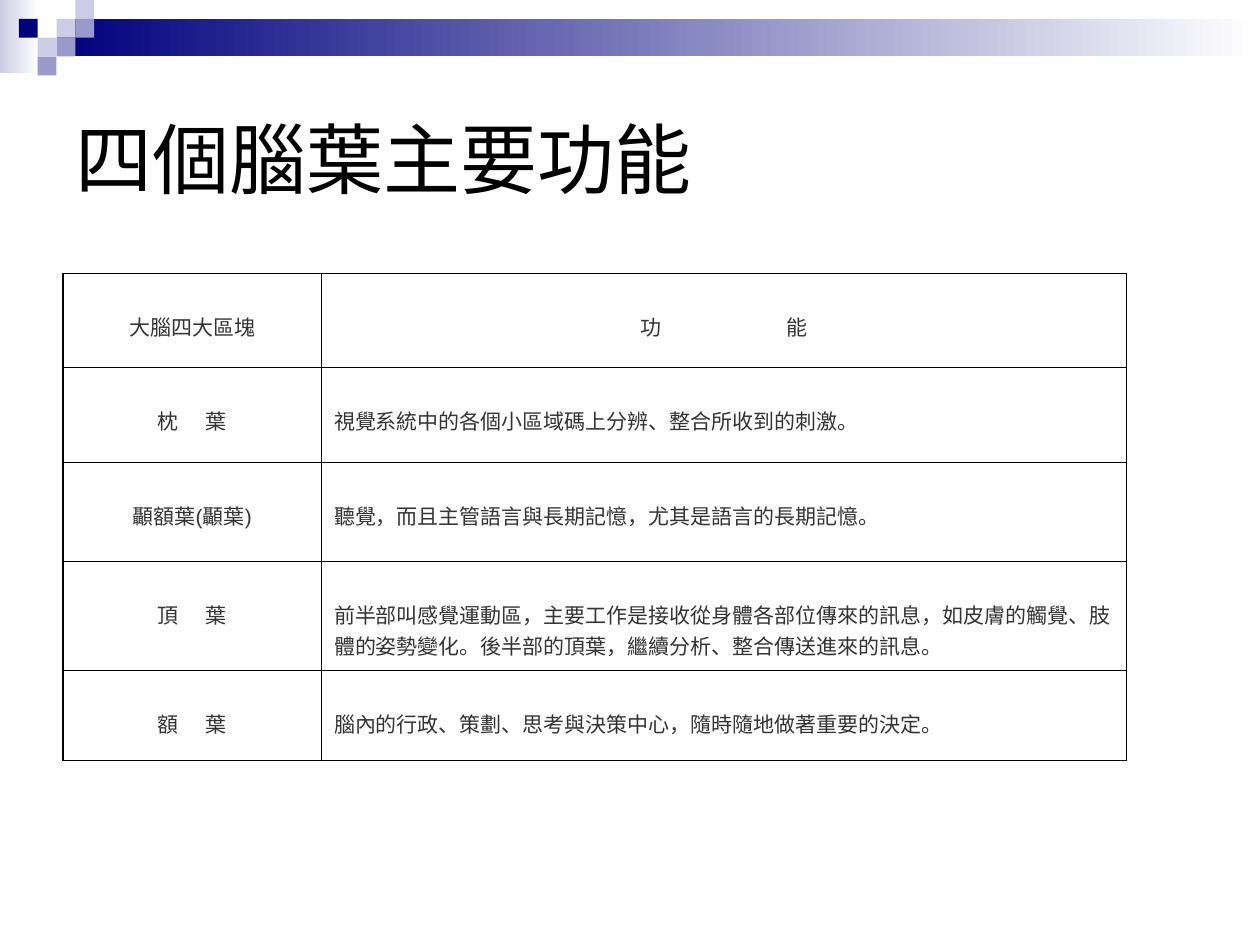
from dataclasses import dataclass

from lxml import etree
from pptx import Presentation
from pptx.dml.color import RGBColor
from pptx.enum.shapes import MSO_SHAPE
from pptx.enum.text import MSO_ANCHOR, PP_ALIGN
from pptx.oxml.ns import qn
from pptx.util import Cm, Pt

RECTANGLE = MSO_SHAPE.RECTANGLE
LEFT, CENTER = PP_ALIGN.LEFT, PP_ALIGN.CENTER
TOP, MIDDLE = MSO_ANCHOR.TOP, MSO_ANCHOR.MIDDLE

NAVY = RGBColor(0x00, 0x00, 0x7D)
LILAC = RGBColor(0x99, 0x99, 0xCC)
PALE = RGBColor(0xCC, 0xCC, 0xE6)
WHITE = RGBColor(0xFF, 0xFF, 0xFF)
BLACK = RGBColor(0x00, 0x00, 0x00)
GRAY = RGBColor(0x33, 0x33, 0x33)

FONT = "Arial"
TILE = 0.38
OUTER_LINE, INNER_LINE = Pt(1), Pt(0.75)


@dataclass
class Band:
    left: float
    top: float
    width: float
    height: float
    color: RGBColor


@dataclass
class Tile:
    column: int
    row: int
    color: RGBColor


@dataclass
class Lobe:
    name: str
    role: str
    height: float
    role_align: PP_ALIGN = LEFT
    role_gap: float = 0


BANDS = [Band(0, 0, 0.79, 1.47, PALE), Band(1.14, 0.38, 24.26, 0.76, NAVY)]
TILES = [
    Tile(3, 1, PALE), Tile(4, 0, PALE), Tile(4, 1, LILAC), Tile(2, 2, PALE),
    Tile(1, 1, NAVY), Tile(3, 2, LILAC), Tile(2, 3, LILAC),
]
COLUMN_WIDTHS = [5.21, 16.23]
NAME_GAP = 12.7
LOBES = [
    Lobe("大腦四大區塊", "功 能", 1.9, CENTER, 69),
    Lobe("枕 葉", "視覺系統中的各個小區域碼上分辨、整合所收到的刺激。", 1.91),
    Lobe("顳額葉(顳葉)", "聽覺，而且主管語言與長期記憶，尤其是語言的長期記憶。", 2),
    Lobe("頂 葉", "前半部叫感覺運動區，主要工作是接收從身體各部位傳來的訊息，"
         "如皮膚的觸覺、肢體的姿勢變化。後半部的頂葉，繼續分析、整合傳送進來的訊息。", 2.2),
    Lobe("額 葉", "腦內的行政、策劃、思考與決策中心，隨時隨地做著重要的決定。", 1.81),
]


def add_block(page, left: float, top: float, width: float, height: float,
              color: RGBColor, fade: bool = False) -> None:
    block = page.shapes.add_shape(RECTANGLE, Cm(left), Cm(top), Cm(width), Cm(height))
    block.shadow.inherit = False
    block.line.fill.background()
    if fade:
        block.fill.gradient()
        block.fill.gradient_angle = 0
        for stop, shade in zip(block.fill.gradient_stops, (color, WHITE)):
            stop.color.rgb = shade
    else:
        block.fill.solid()
        block.fill.fore_color.rgb = color


def write_text(frame, text: str, *, size: float, color: RGBColor,
               align: PP_ALIGN = LEFT, gap: float = 0) -> None:
    para = frame.paragraphs[0]
    para.alignment = align
    pieces = text.partition(" ") if gap else (text,)
    for piece in filter(None, pieces):
        span = para.add_run()
        span.text = piece
        span.font.name = FONT
        span.font.size = Pt(size)
        span.font.color.rgb = color
        if piece == " ":
            span._r.get_or_add_rPr().set("spc", str(round(gap * 100)))


def set_border(cell, side: str, width: int) -> None:
    line = etree.SubElement(cell._tc.get_or_add_tcPr(), qn(f"a:{side}"), w=str(width))
    fill = etree.SubElement(line, qn("a:solidFill"))
    etree.SubElement(fill, qn("a:srgbClr"), val=str(BLACK))


def format_cell(cell, row: int, column: int) -> None:
    last_row, last_column = len(LOBES) - 1, len(COLUMN_WIDTHS) - 1
    edges = {"lnL": column == 0, "lnR": column == last_column,
             "lnT": row == 0, "lnB": row == last_row}
    for side, is_outer in edges.items():
        set_border(cell, side, OUTER_LINE if is_outer else INNER_LINE)
    cell.fill.background()
    cell.vertical_anchor = TOP
    cell.margin_top = Cm(0.76)


def add_lobe_table(page) -> None:
    frame = page.shapes.add_table(
        len(LOBES), len(COLUMN_WIDTHS), Cm(1.27), Cm(5.51),
        Cm(sum(COLUMN_WIDTHS)), Cm(sum(lobe.height for lobe in LOBES)))
    table = frame.table
    table.first_row = False
    table.horz_banding = False
    for column, width in zip(table.columns, COLUMN_WIDTHS):
        column.width = Cm(width)
    for row, lobe in enumerate(LOBES):
        table.rows[row].height = Cm(lobe.height)
        entries = [(lobe.name, CENTER, NAME_GAP), (lobe.role, lobe.role_align, lobe.role_gap)]
        for column, (text, align, gap) in enumerate(entries):
            cell = table.cell(row, column)
            format_cell(cell, row, column)
            write_text(cell.text_frame, text, size=12, color=GRAY, align=align, gap=gap)


def main() -> None:
    deck = Presentation()
    deck.slide_width, deck.slide_height = Cm(25.4), Cm(19.05)
    page = deck.slides.add_slide(deck.slide_layouts[5])
    for band in BANDS:
        add_block(page, band.left, band.top, band.width, band.height, band.color, fade=True)
    for tile in TILES:
        add_block(page, tile.column * TILE, tile.row * TILE, TILE, TILE, tile.color)
    title = page.shapes.title
    title.left, title.top, title.width, title.height = Cm(1.27), Cm(1.27), Cm(22.86), Cm(3.81)
    title.text_frame.vertical_anchor = MIDDLE
    write_text(title.text_frame, "四個腦葉主要功能", size=44, color=BLACK)
    add_lobe_table(page)
    deck.save("out.pptx")


if __name__ == "__main__":
    main()
